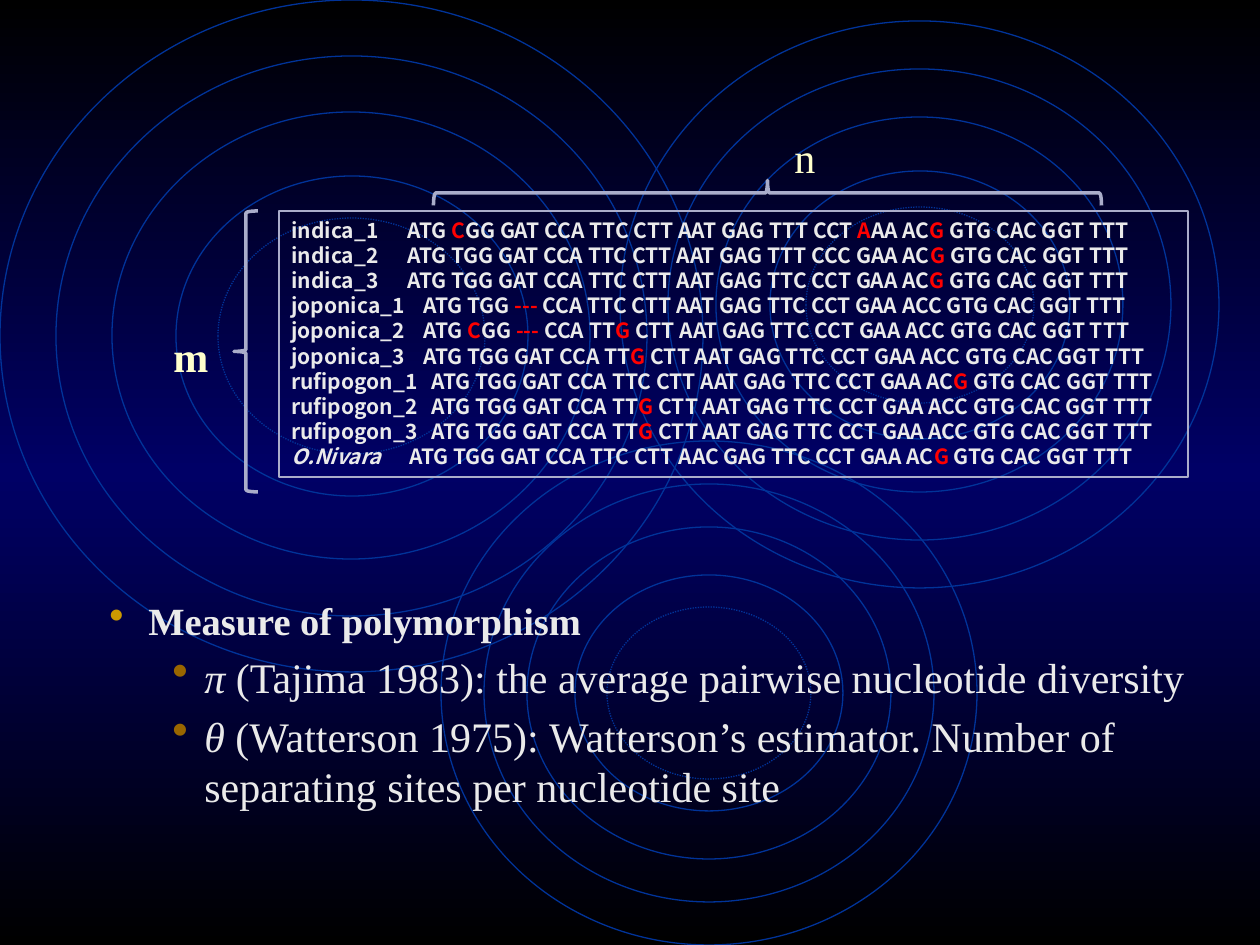
from pptx import Presentation
from pptx.dml.color import RGBColor
from pptx.enum.dml import MSO_LINE
from pptx.enum.shapes import MSO_SHAPE
from pptx.enum.text import MSO_ANCHOR, MSO_AUTO_SIZE, PP_ALIGN
from pptx.oxml import parse_xml
from pptx.oxml.ns import nsdecls, qn
from pptx.util import Pt

PX = 914400 // 126
ELLIPSE, RECTANGLE, BRACE = MSO_SHAPE.OVAL, MSO_SHAPE.RECTANGLE, MSO_SHAPE.LEFT_BRACE
DOTTED = MSO_LINE.ROUND_DOT
TOP, LEFT = MSO_ANCHOR.TOP, PP_ALIGN.LEFT
GROW, FIXED = MSO_AUTO_SIZE.SHAPE_TO_FIT_TEXT, MSO_AUTO_SIZE.NONE
SERIF, SANS = "Times New Roman", "Noto Sans CJK SC"
COLORS = {
    "black": "000000", "navy": "000066", "ring": "003399", "border": "AAADCA",
    "text": "EAEAEA", "variant": "FF0000", "label": "FFFFCC",
    "bullet": "CC9900", "sub_bullet": "996600",
}

RIPPLES = [(0, 0, 703, 672), (441, 441, 536, 504), (620, 21, 599, 567)]
RING_INSETS = [0, 0.08, 0.16, 0.25, 0.31]

TAB_STOPS = {"indica": 116, "joponica": 132, "rufipogon": 140, "O.Nivara": 118}
SEQUENCES = [
    ("indica_1", "ATG |C|GG GAT CCA TTC CTT AAT GAG TTT CCT |A|AA AC|G| GTG CAC GGT TTT"),
    ("indica_2", "ATG TGG GAT CCA TTC CTT AAT GAG TTT CCC GAA AC|G| GTG CAC GGT TTT"),
    ("indica_3", "ATG TGG GAT CCA TTC CTT AAT GAG TTC CCT GAA AC|G| GTG CAC GGT TTT"),
    ("joponica_1", "ATG TGG |--- |CCA TTC CTT AAT GAG TTC CCT GAA ACC GTG CAC GGT TTT"),
    ("joponica_2", "ATG |C|GG |--- |CCA TT|G| CTT AAT GAG TTC CCT GAA ACC GTG CAC GGT TTT"),
    ("joponica_3", "ATG TGG GAT CCA TT|G| CTT AAT GAG TTC CCT GAA ACC GTG CAC GGT TTT"),
    ("rufipogon_1", "ATG TGG GAT CCA TTC CTT AAT GAG TTC CCT GAA AC|G| GTG CAC GGT TTT"),
    ("rufipogon_2", "ATG TGG GAT CCA TT|G| CTT AAT GAG TTC CCT GAA ACC GTG CAC GGT TTT"),
    ("rufipogon_3", "ATG TGG GAT CCA TT|G| CTT AAT GAG TTC CCT GAA ACC GTG CAC GGT TTT"),
    ("O.Nivara", "ATG TGG GAT CCA TTC CTT AAC GAG TTC CCT GAA AC|G| GTG CAC GGT TTT"),
]

MEASURES = [
    ("π", " (Tajima 1983): the average pairwise nucleotide diversity"),
    ("θ", " (Watterson 1975): Watterson’s estimator. "
          "Number of separating sites per nucleotide site"),
]


def color(name):
    return RGBColor.from_string(COLORS[name])


def scaled(*lengths):
    return [round(length) * PX for length in lengths]


def set_background(slide):
    fill = slide.background.fill
    fill.gradient()
    fill.gradient_angle = 270
    stops = slide.element.find(".//" + qn("a:gsLst"))
    stops.clear()
    for position, name in [(0, "black"), (50000, "navy"), (100000, "black")]:
        stops.append(parse_xml(
            f'<a:gs {nsdecls("a")} pos="{position}">'
            f'<a:srgbClr val="{COLORS[name]}"/></a:gs>'))


def add_outline(slide, kind, box, line_color, weight):
    shape = slide.shapes.add_shape(kind, *scaled(*box))
    shape.shadow.inherit = False
    shape.fill.background()
    shape.line.color.rgb = color(line_color)
    shape.line.width = Pt(weight)
    return shape


def add_ripple(slide, left, top, width, height):
    for fraction in RING_INSETS:
        inset = fraction * width
        box = (left + inset, top + inset, width - 2 * inset, height - 2 * inset)
        ring = add_outline(slide, ELLIPSE, box, "ring", 0.75)
    ring.line.dash_style = DOTTED


def set_font(paragraph, name, size, color_name, bold=False):
    font = paragraph.font
    font.name, font.size, font.bold = name, Pt(size), bold
    font.color.rgb = color(color_name)


def add_run(paragraph, text):
    run = paragraph.add_run()
    run.text = text
    return run


def next_paragraph(frame, index):
    return frame.add_paragraph() if index else frame.paragraphs[0]


def set_tab_stop(paragraph, position):
    properties = paragraph._p.get_or_add_pPr()
    properties.insert_element_before(parse_xml(
        f'<a:tabLst {nsdecls("a")}><a:tab pos="{position * PX}" algn="l"/></a:tabLst>'),
        "a:defRPr", "a:extLst")


def set_bullet(paragraph, color_name, margin, indent):
    properties = paragraph._p.get_or_add_pPr()
    properties.set("marL", str(margin * PX))
    properties.set("indent", str(-indent * PX))
    for content in (f'buClr {nsdecls("a")}><a:srgbClr val="{COLORS[color_name]}"/></a:buClr>',
                    f'buSzPct {nsdecls("a")} val="110000"/>',
                    f'buChar {nsdecls("a")} char="•"/>'):
        properties.insert_element_before(
            parse_xml("<a:" + content), "a:tabLst", "a:defRPr", "a:extLst")


def add_alignment(slide):
    shape = add_outline(slide, RECTANGLE, (279, 211, 909, 266), "border", 1.5)
    frame = shape.text_frame
    frame.word_wrap = True
    frame.auto_size = GROW
    frame.vertical_anchor = TOP
    for index, (name, sequence) in enumerate(SEQUENCES):
        paragraph = next_paragraph(frame, index)
        paragraph.alignment = LEFT
        paragraph.line_spacing = Pt(14.4)
        set_font(paragraph, SANS, 12, "text", bold=True)
        species = name.split("_")[0]
        set_tab_stop(paragraph, TAB_STOPS[species])
        add_run(paragraph, name + "\t").font.italic = species == "O.Nivara"
        for part, text in enumerate(sequence.split("|")):
            run = add_run(paragraph, text)
            run.font.color.rgb = color("variant" if part % 2 else "text")


def add_measures(slide):
    frame = slide.shapes.add_textbox(*scaled(34, 591, 1173, 270)).text_frame
    frame.word_wrap = True
    frame.auto_size = FIXED
    heading = frame.paragraphs[0]
    heading.text = "Measure of polymorphism"
    heading.space_before = Pt(4.4)
    set_font(heading, SERIF, 22, "text", bold=True)
    set_bullet(heading, "bullet", 102, 39)
    for symbol, description in MEASURES:
        paragraph = frame.add_paragraph()
        paragraph.level = 1
        paragraph.space_before = Pt(4.8)
        set_font(paragraph, SERIF, 24, "text")
        set_bullet(paragraph, "sub_bullet", 158, 32)
        add_run(paragraph, symbol).font.italic = True
        add_run(paragraph, description)


def add_label(slide, text, box, bold):
    frame = slide.shapes.add_textbox(*scaled(*box)).text_frame
    frame.word_wrap = False
    frame.auto_size = GROW
    frame.paragraphs[0].text = text
    set_font(frame.paragraphs[0], SERIF, 24, "label", bold)


def main():
    presentation = Presentation()
    presentation.slide_width, presentation.slide_height = scaled(1260, 945)
    slide = presentation.slides.add_slide(presentation.slide_layouts[6])
    set_background(slide)
    for ripple in RIPPLES:
        add_ripple(slide, *ripple)
    add_measures(slide)
    add_alignment(slide)
    add_outline(slide, BRACE, (234, 211, 24, 281), "border", 2)
    add_label(slide, "m", (161, 324, 58, 62), bold=True)
    column_brace = add_outline(slide, BRACE, (755, -141, 25, 668), "border", 2)
    column_brace.rotation = 90
    add_label(slide, "n", (782, 125, 44, 63), bold=False)
    presentation.save("out.pptx")


if __name__ == "__main__":
    main()
